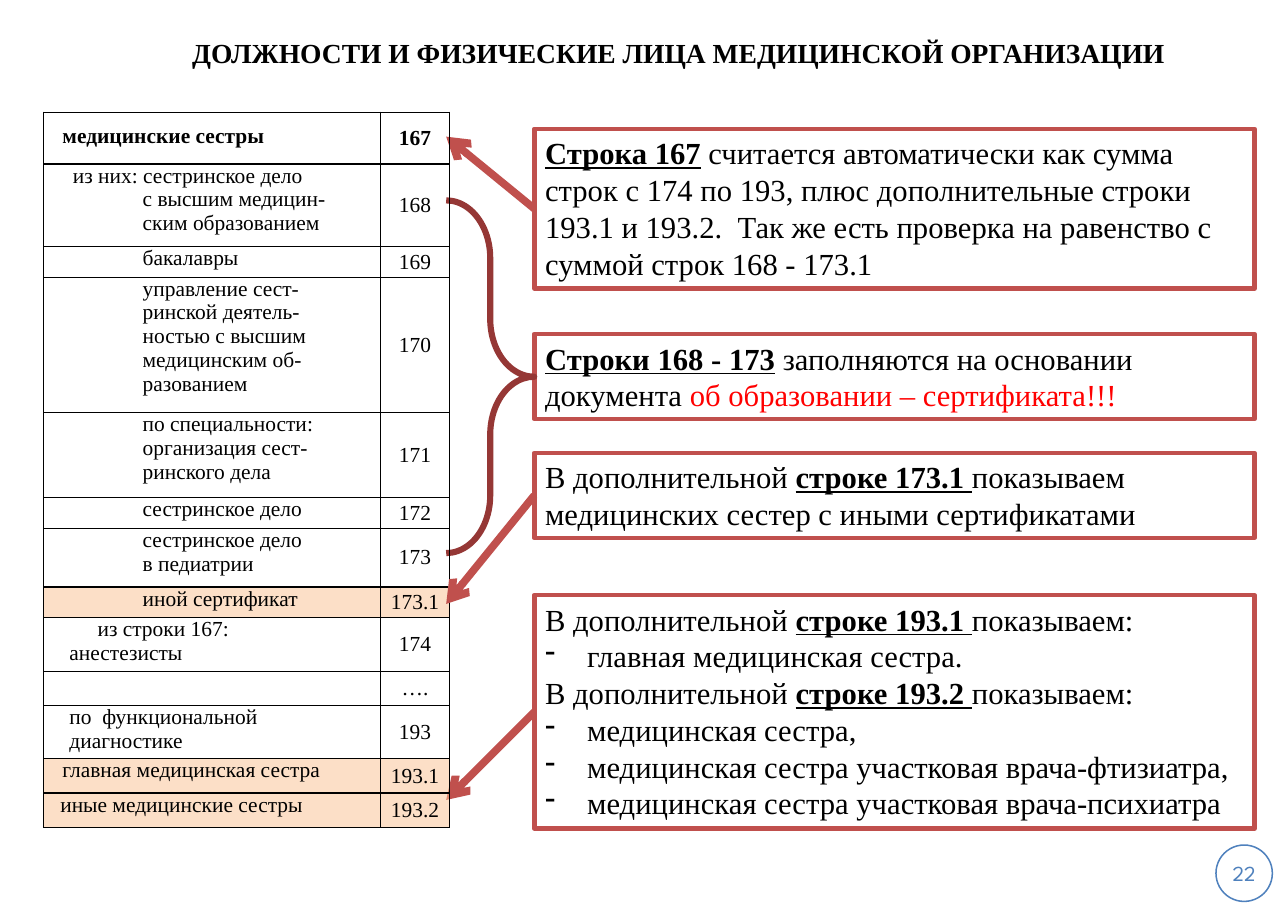
from dataclasses import dataclass

from lxml.etree import SubElement
from pptx import Presentation
from pptx.dml.color import RGBColor as Rgb
from pptx.enum.shapes import MSO_CONNECTOR as Connector, MSO_SHAPE as Preset
from pptx.enum.text import MSO_ANCHOR as Anchor, MSO_AUTO_SIZE as AutoSize, PP_ALIGN as Align
from pptx.oxml.ns import qn
from pptx.util import Cm, Pt


@dataclass(frozen=True)
class Theme:
    serif: str = "Times New Roman"
    sans: str = "League Spartan"
    black: str = "000000"
    white: str = "FFFFFF"
    alert: str = "FF0000"
    frame: str = "C0504D"
    brace: str = "953735"
    badge: str = "4F81BD"
    highlight: str = "FAC090"
    title_size: int = 18
    note_size: int = 20
    small_size: int = 14


THEME = Theme()


@dataclass(frozen=True)
class Span:
    text: str
    strong: bool = False
    color: str = THEME.black


@dataclass(frozen=True)
class Para:
    spans: tuple[Span, ...]
    indent: float = 0
    bullet: bool = False


@dataclass(frozen=True)
class Note:
    top: float
    height: float
    paras: tuple[Para, ...]
    arrow_end: float | None = None


@dataclass(frozen=True)
class Row:
    number: str
    height: float
    lines: tuple[str, ...]
    indents: tuple[float, ...]
    bold: bool = False
    highlighted: bool = False


def plain(text: str, indent: float = 0, bullet: bool = False) -> Para:
    return Para((Span(text),), indent, bullet)


def shows(row: str) -> Para:
    return Para((Span("В дополнительной "), Span(f"строке {row} ", True), Span("показываем:")))


def item(text: str) -> Para:
    return plain(text, 0.97, True)


NOTE_LEFT, NOTE_WIDTH, ARROW_LEFT = 12.32, 16.61, 10.29
NOTES = (
    Note(2.97, 3.68, (Para((
        Span("Строка 167", True),
        Span(" считается автоматически как сумма строк с 174 по 193, плюс дополнительные "
             "строки 193.1 и 193.2.  Так же есть проверка на равенство с суммой строк "
             "168 - 173.1"))),), 3.15),
    Note(13.72, 5.38, (
        shows("193.1"), item("главная медицинская сестра."),
        shows("193.2"), item("медицинская сестра,"),
        item("медицинская сестра участковая врача-фтизиатра,"),
        item("медицинская сестра участковая врача-психиатра")), 18.44),
    Note(7.7, 1.96, (Para((
        Span("Строки 168 - 173", True), Span(" заполняются на основании документа "),
        Span("об образовании – сертификата!!!", color=THEME.alert))),)),
    Note(10.44, 1.96, (Para((
        Span("В дополнительной "), Span("строке 173.1 ", True),
        Span("показываем медицинских сестер с иными сертификатами"))),), 13.92),
)

SUB = 2.1
COLUMNS = (7.77, 1.58)
ROWS = (
    Row("167", 1.19, ("медицинские сестры",), (0.25,), bold=True),
    Row("168", 1.9, ("из них: сестринское дело", "с высшим медицин-", "ским образованием"),
        (0.49, SUB, SUB)),
    Row("169", 0.71, ("бакалавры",), (SUB,)),
    Row("170", 3.12, ("управление сест-", "ринской деятель-", "ностью с высшим",
                      "медицинским об-", "разованием"), (SUB,) * 5),
    Row("171", 1.96, ("по специальности:", "организация сест-", "ринского дела"), (SUB,) * 3),
    Row("172", 0.71, ("сестринское дело",), (SUB,)),
    Row("173", 1.35, ("сестринское дело", "в педиатрии"), (SUB,) * 2),
    Row("173.1", 0.71, ("иной сертификат",), (SUB,), highlighted=True),
    Row("174", 1.24, ("из строки 167:", "анестезисты"), (1.06, 0.41)),
    Row("….", 0.79, ("",), (0,)),
    Row("193", 1.22, ("по  функциональной диагностике",), (0.41,)),
    Row("193.1", 0.79, ("главная медицинская сестра",), (0.25,), highlighted=True),
    Row("193.2", 0.79, ("иные медицинские сестры",), (0.2,), highlighted=True),
)


def write(frame, paras: tuple[Para, ...], *, size: int, font: str = THEME.serif,
          bold: bool = False, align=Align.LEFT, anchor=Anchor.TOP, spacing=None) -> None:
    frame.word_wrap = True
    frame.vertical_anchor = anchor
    for index, source in enumerate(paras):
        para = frame.add_paragraph() if index else frame.paragraphs[0]
        para.alignment = align
        if spacing:
            para.line_spacing = spacing
        properties = para._p.get_or_add_pPr()
        properties.set("marL", str(Cm(source.indent)))
        properties.set("indent", str(-Cm(source.indent) if source.bullet else 0))
        if source.bullet:
            SubElement(properties, qn("a:buChar"), char="-")
        para.font.size = Pt(size)
        for part in source.spans:
            if not part.text:
                continue
            span = para.add_run()
            span.text = part.text
            span.font.name, span.font.size = font, Pt(size)
            span.font.bold = bold or part.strong
            span.font.underline = part.strong
            span.font.color.rgb = Rgb.from_string(part.color)


def set_margins(target, left: float, top: float, right: float, bottom: float) -> None:
    target.margin_left, target.margin_top = Cm(left), Cm(top)
    target.margin_right, target.margin_bottom = Cm(right), Cm(bottom)


def add_outline(page, preset, area: tuple[float, ...], color: str, width: float,
                fill: str | None = None):
    shape = page.shapes.add_shape(preset, *map(Cm, area))
    shape.shadow.inherit = False
    shape.line.color.rgb = Rgb.from_string(color)
    shape.line.width = Pt(width)
    if fill:
        shape.fill.solid()
        shape.fill.fore_color.rgb = Rgb.from_string(fill)
    else:
        shape.fill.background()
    return shape


def add_note(page, note: Note) -> None:
    area = (NOTE_LEFT, note.top, NOTE_WIDTH, note.height)
    box = add_outline(page, Preset.RECTANGLE, area, THEME.frame, 3, THEME.white)
    write(box.text_frame, note.paras, size=THEME.note_size)
    box.text_frame.auto_size = AutoSize.SHAPE_TO_FIT_TEXT
    if note.arrow_end is None:
        return
    arrow = page.shapes.add_connector(Connector.STRAIGHT, box.left, box.top + box.height // 2,
                                      Cm(ARROW_LEFT), Cm(note.arrow_end))
    arrow.begin_connect(box, 1)
    arrow.line.color.rgb = Rgb.from_string(THEME.frame)
    arrow.line.width = Pt(5)
    SubElement(arrow.line._get_or_add_ln(), qn("a:tailEnd"), type="arrow")
    SubElement(arrow._element.spPr, qn("a:effectLst"))


def style_cell(cell, highlighted: bool) -> None:
    """Give a cell thin black borders and either no fill or a half-transparent one."""
    set_margins(cell, 0.18, 0, 0.18, 0)
    properties = cell._tc.get_or_add_tcPr()
    for side in ("lnL", "lnR", "lnT", "lnB"):
        border = SubElement(properties, qn(f"a:{side}"), w=str(Pt(1)))
        SubElement(SubElement(border, qn("a:solidFill")), qn("a:srgbClr"), val=THEME.black)
    if not highlighted:
        cell.fill.background()
        return
    cell.fill.solid()
    cell.fill.fore_color.rgb = Rgb.from_string(THEME.highlight)
    SubElement(properties.find(f"{qn('a:solidFill')}/{qn('a:srgbClr')}"), qn("a:alpha"), val="50000")


def add_staff_table(page) -> None:
    height = sum(row.height for row in ROWS)
    table = page.shapes.add_table(len(ROWS), len(COLUMNS), Cm(1.01), Cm(2.59),
                                  Cm(sum(COLUMNS)), Cm(height)).table
    table.first_row = table.horz_banding = False
    for column, width in zip(table.columns, COLUMNS):
        column.width = Cm(width)
    for index, row in enumerate(ROWS):
        table.rows[index].height = Cm(row.height)
        label, number = table.cell(index, 0), table.cell(index, 1)
        for cell in (label, number):
            style_cell(cell, row.highlighted)
        write(label.text_frame, tuple(map(plain, row.lines, row.indents)),
              size=THEME.small_size, bold=row.bold, spacing=1.5 if row.bold else None)
        write(number.text_frame, (plain(row.number),), size=THEME.small_size,
              bold=row.bold, align=Align.CENTER)
        number.vertical_anchor = Anchor.MIDDLE


def main() -> None:
    deck = Presentation()
    deck.slide_width, deck.slide_height = Cm(29.7), Cm(21)
    page = deck.slides.add_slide(deck.slide_layouts[6])

    badge = add_outline(page, Preset.OVAL, (28.04, 19.48, 1.3, 1.3), THEME.badge, 1)
    set_margins(badge.text_frame, 0, 0, 0, 0)
    write(badge.text_frame, (Para((Span("22", color=THEME.badge),)),), size=THEME.small_size,
          font=THEME.sans, align=Align.CENTER, anchor=Anchor.MIDDLE)

    title = page.shapes.add_textbox(Cm(1.85), Cm(0), Cm(27.85), Cm(2.41))
    set_margins(title.text_frame, 0, 0.13, 0.25, 0.13)
    write(title.text_frame, (plain("ДОЛЖНОСТИ И ФИЗИЧЕСКИЕ ЛИЦА МЕДИЦИНСКОЙ ОРГАНИЗАЦИИ"),),
          size=THEME.title_size, bold=True, align=Align.CENTER, anchor=Anchor.MIDDLE)

    *back_notes, front_note = NOTES
    for note in back_notes:
        add_note(page, note)
    brace = add_outline(page, Preset.RIGHT_BRACE, (10.29, 4.62, 2.03, 8.13), THEME.brace, 4)
    brace.adjustments[0], brace.adjustments[1] = 0.655, 0.5
    add_staff_table(page)
    add_note(page, front_note)
    deck.save("out.pptx")


if __name__ == "__main__":
    main()
